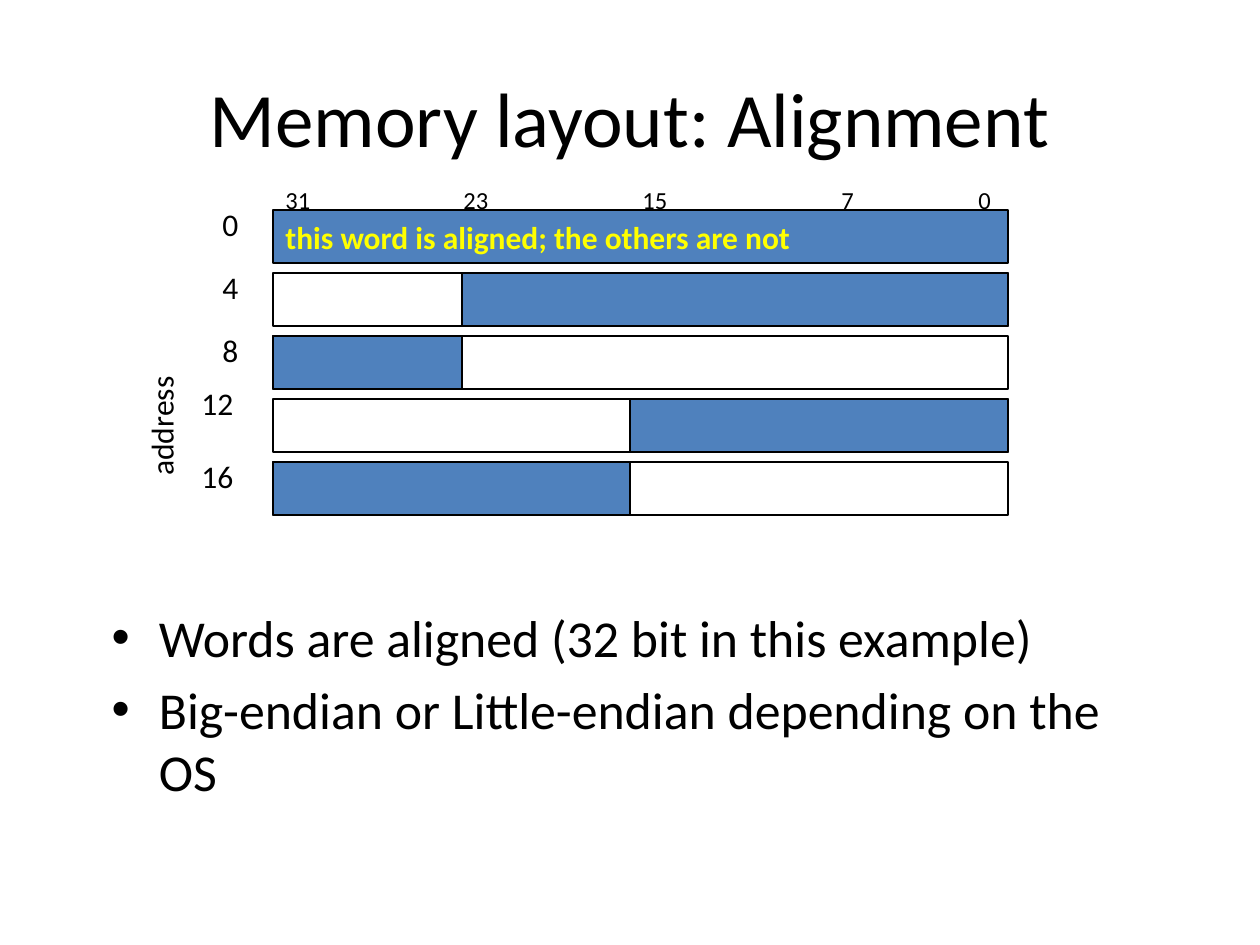
from dataclasses import dataclass

from pptx import Presentation
from pptx.dml.color import RGBColor
from pptx.enum.shapes import MSO_SHAPE
from pptx.enum.text import MSO_ANCHOR, MSO_AUTO_SIZE, PP_ALIGN
from pptx.util import Emu, Pt

RECTANGLE = MSO_SHAPE.RECTANGLE
MIDDLE = MSO_ANCHOR.MIDDLE
FIT_SHAPE, NO_FIT = MSO_AUTO_SIZE.SHAPE_TO_FIT_TEXT, MSO_AUTO_SIZE.NONE
LEFT, CENTER = PP_ALIGN.LEFT, PP_ALIGN.CENTER
EMU_PER_PX = 914400 / 126


def px(length):
    return Emu(round(length * EMU_PER_PX))


@dataclass(frozen=True)
class Theme:
    font: str = "Calibri"
    text: RGBColor = RGBColor(0x00, 0x00, 0x00)
    empty: RGBColor = RGBColor(0xFF, 0xFF, 0xFF)
    word: RGBColor = RGBColor(0x4F, 0x81, 0xBD)
    highlight: RGBColor = RGBColor(0xFF, 0xFF, 0x00)
    title_size: float = 44
    body_size: float = 29.6
    label_size: float = 18
    bit_size: float = 14
    line_width: float = 0.75


class SlideBuilder:
    def __init__(self, slide, theme):
        self.slide = slide
        self.theme = theme

    def style(self, paragraph, size, color=None, bold=False, align=LEFT):
        paragraph.alignment = align
        font = paragraph.font
        font.name, font.size, font.bold = self.theme.font, Pt(size), bold
        font.color.rgb = color or self.theme.text

    def place(self, shape, left, top, width, height):
        shape.left, shape.top = px(left), px(top)
        shape.width, shape.height = px(width), px(height)

    def title(self, text, *box):
        shape = self.slide.shapes.title
        self.place(shape, *box)
        frame = shape.text_frame
        frame.text = text
        frame.vertical_anchor = MIDDLE
        self.style(frame.paragraphs[0], self.theme.title_size, align=CENTER)

    def bullets(self, lines, *box):
        shape = self.slide.placeholders[1]
        self.place(shape, *box)
        frame = shape.text_frame
        frame.text = "\n".join(lines)
        frame.auto_size = NO_FIT
        for paragraph in frame.paragraphs:
            self.style(paragraph, self.theme.body_size)

    def bar(self, left, top, width, height, color, text=""):
        shape = self.slide.shapes.add_shape(
            RECTANGLE, px(left), px(top), px(width), px(height))
        shape.shadow.inherit = False
        shape.fill.solid()
        shape.fill.fore_color.rgb = color
        shape.line.color.rgb = self.theme.text
        shape.line.width = Pt(self.theme.line_width)
        if text:
            frame = shape.text_frame
            frame.text = text
            frame.word_wrap = False
            frame.vertical_anchor = MIDDLE
            self.style(frame.paragraphs[0], self.theme.label_size,
                       self.theme.highlight, bold=True)

    def label(self, text, left, top, width, height, size, rotation=0):
        shape = self.slide.shapes.add_textbox(
            px(left), px(top), px(width), px(height))
        shape.rotation = rotation
        frame = shape.text_frame
        frame.text = text
        frame.word_wrap = False
        frame.auto_size = FIT_SHAPE
        self.style(frame.paragraphs[0], size)


def main():
    presentation = Presentation()
    presentation.slide_width, presentation.slide_height = px(1260), px(945)
    slide = presentation.slides.add_slide(presentation.slide_layouts[1])
    theme = Theme()
    builder = SlideBuilder(slide, theme)

    builder.title("Memory layout: Alignment", 63, 38, 1134, 158)
    builder.bullets(["Words are aligned (32 bit in this example)",
                     "Big-endian or Little-endian depending on the OS"],
                    99, 599, 1081, 189)

    memory_left, memory_right = 273, 1008
    memory_top, row_pitch, row_height = 210, 63, 53
    first_split, second_split = 462, 630
    word_spans = [(first_split, memory_right), (memory_left, first_split),
                  (second_split, memory_right), (memory_left, second_split)]

    builder.bar(memory_left, memory_top, memory_right - memory_left, row_height,
                theme.word, "this word is aligned; the others are not")
    for row, (start, end) in enumerate(word_spans, 1):
        top = memory_top + row * row_pitch
        builder.bar(memory_left, top, memory_right - memory_left, row_height, theme.empty)
        builder.bar(start, top, end - start, row_height, theme.word)

    builder.label("address", 92, 381, 151, 63, theme.label_size, rotation=270)
    addresses = [("0", 199), ("4", 262), ("8", 325), ("12", 378), ("16", 451)]
    for address, top in addresses:
        left, width = (210, 47) if len(address) == 1 else (189, 67)
        builder.label(address, left, top, width, 63, theme.label_size)

    bits = [("31", 273), ("23", 451), ("15", 630), ("7", 829), ("0", 966)]
    for bit, left in bits:
        width = 38 if len(bit) == 1 else 50
        builder.label(bit, left, 179, width, 42, theme.bit_size)

    presentation.save("out.pptx")


if __name__ == "__main__":
    main()
